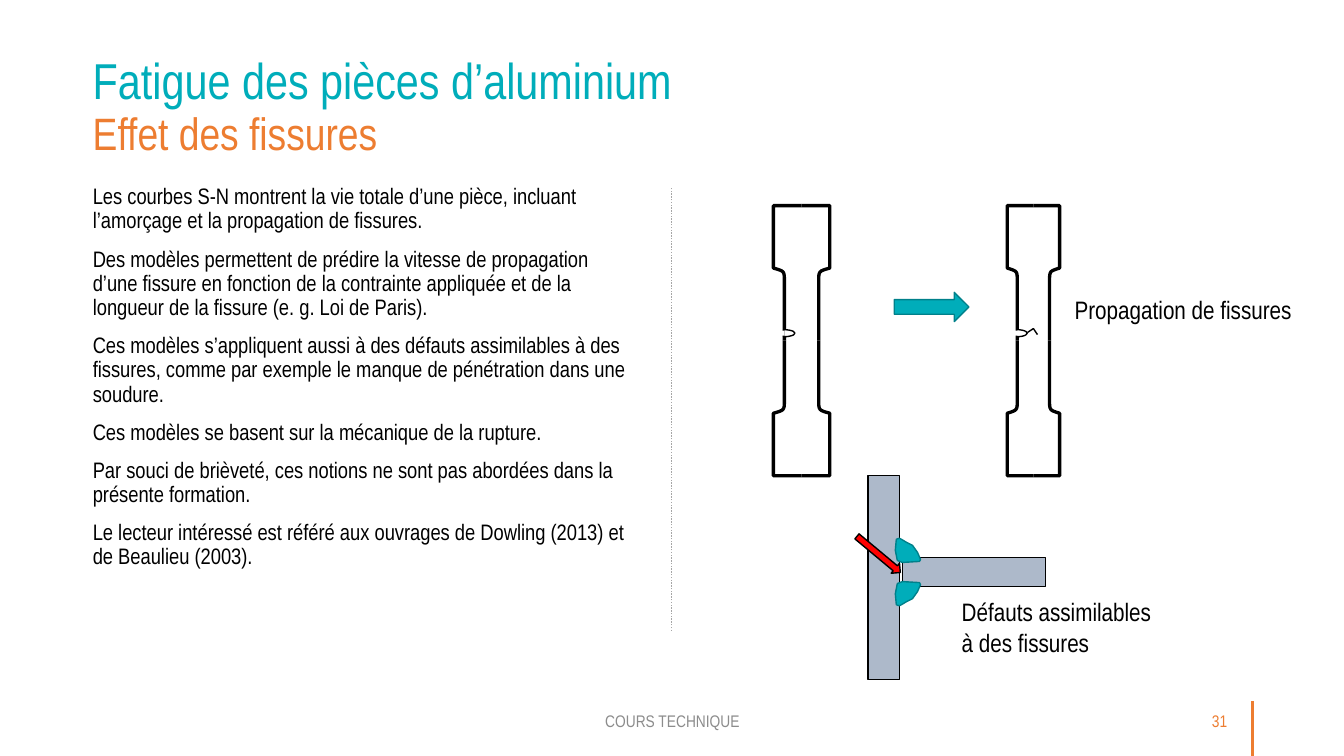
import pptx
import pptx.util
import pptx.dml.color
import pptx.enum.dml
import pptx.enum.shapes
import pptx.enum.text
import pptx.oxml.ns
from lxml import etree

Inches = pptx.util.Inches
Pt = pptx.util.Pt
RGBColor = pptx.dml.color.RGBColor
SHAPE = pptx.enum.shapes.MSO_SHAPE
ALIGN = pptx.enum.text.PP_ALIGN
ANCHOR = pptx.enum.text.MSO_ANCHOR

TEAL = RGBColor(0x00, 0xAD, 0xBA)
DARK = RGBColor(0x00, 0x80, 0x8A)
ORANGE = RGBColor(0xED, 0x7D, 0x31)
STEEL = RGBColor(0xAD, 0xB9, 0xCA)
GRAY = RGBColor(0x8C, 0x8C, 0x8C)
SILVER = RGBColor(0xA6, 0xA6, 0xA6)
RED = RGBColor(0xFF, 0x00, 0x00)
BLACK = RGBColor(0x00, 0x00, 0x00)
WHITE = RGBColor(0xFF, 0xFF, 0xFF)

BODY = [
    "Les courbes S-N montrent la vie totale d’une pièce, incluant l’amorçage et la propagation de fissures.",
    "Des modèles permettent de prédire la vitesse de propagation d’une fissure en fonction de la contrainte appliquée et de la longueur de la fissure (e. g. Loi de Paris).",
    "Ces modèles s’appliquent aussi à des défauts assimilables à des fissures, comme par exemple le manque de pénétration dans une soudure.",
    "Ces modèles se basent sur la mécanique de la rupture.",
    "Par souci de brièveté, ces notions ne sont pas abordées dans la présente formation.",
    "Le lecteur intéressé est référé aux ouvrages de Dowling (2013) et de Beaulieu (2003).",
]
WELD = [
    (8.89, 5.35), (8.88, 5.46), (8.9, 5.56), (8.95, 5.58), (9.12, 5.57),
    (9.13, 5.55), (9.1, 5.48), (9.05, 5.41), (8.99, 5.38), (8.94, 5.35),
    (8.92, 5.34),
]


def write(slide, box, text, size=18, tone=BLACK, align=ALIGN.LEFT,
          anchor=ANCHOR.TOP, inset=True, wrap=True, pitch=None, gap=0):
    frame = slide.shapes.add_textbox(*map(Inches, box)).text_frame
    frame.word_wrap = wrap
    frame.vertical_anchor = anchor
    if not inset:
        frame.margin_left = frame.margin_right = 0
        frame.margin_top = frame.margin_bottom = 0
    frame.text = text
    for i, para in enumerate(frame.paragraphs):
        para.alignment = align
        para.line_spacing = pitch
        if i and gap:
            para.space_before = Pt(gap)
        for run in para.runs:
            run.font.name = "Arial Narrow"
            run.font.size = Pt(size)
            run.font.color.rgb = tone
    return frame


def paint(shape, fill=None, line=None, width=1):
    shape.shadow.inherit = False
    if fill is None:
        shape.fill.background()
    else:
        shape.fill.solid()
        shape.fill.fore_color.rgb = fill
    if line is None:
        shape.line.fill.background()
    else:
        shape.line.color.rgb = line
        shape.line.width = Pt(width)


def block(slide, kind, box, fill, line=None, turn=0, adjust=()):
    shape = slide.shapes.add_shape(kind, *map(Inches, box))
    for i, value in enumerate(adjust):
        shape.adjustments[i] = value
    shape.rotation = turn
    paint(shape, fill, line)


def trace(slide, points, fill=None, line=BLACK, width=1, close=False):
    spots = [(Inches(x), Inches(y)) for x, y in points]
    pen = slide.shapes.build_freeform(*spots[0])
    pen.add_line_segments(spots[1:], close=close)
    paint(pen.convert_to_shape(), fill, line, width)


def rule(slide, start, end, tone, width, dash=None):
    line = slide.shapes.add_connector(
        pptx.enum.shapes.MSO_CONNECTOR.STRAIGHT, *map(Inches, start + end))
    line.line.color.rgb = tone
    line.line.width = Pt(width)
    if dash:
        line.line.dash_style = dash
    etree.SubElement(line._element.spPr, pptx.oxml.ns.qn("a:effectLst"))


def curve(a, b, c, d, steps=8):
    for i in range(steps + 1):
        t = i / steps
        u = 1 - t
        yield tuple(u**3 * p + 3 * u * u * t * q + 3 * u * t * t * r + t**3 * s
                    for p, q, r, s in zip(a, b, c, d))


def sample(slide, mid, half, neck):
    bend = curve((neck, 0.59), (neck, 0.69), (neck, 0.69), (half, 0.72))
    side = [(neck, 0), *bend, (half, 1.34), (0, 1.34)]
    for down in (-1, 1):
        for right in (-1, 1):
            trace(slide, [(mid + right * x, 3.38 + down * y) for x, y in side],
                  width=2.38)
    left = mid - half
    block(slide, SHAPE.CHORD, (left - 0.01, 3.27, 0.8 * half, 0.07), WHITE,
          BLACK, 180, (54.208, 162))
    block(slide, SHAPE.RECTANGLE, (left + 0.05, 3.28, 0.06, 0.05), WHITE)


def main():
    deck = pptx.Presentation()
    deck.slide_width, deck.slide_height = Inches(13.33), Inches(7.5)
    slide = deck.slides.add_slide(deck.slide_layouts[6])

    rule(slide, (12.42, 7.5), (12.42, 6.95), ORANGE, 2.25)
    rule(slide, (6.66, 6.26), (6.66, 1.86), SILVER, 1,
         pptx.enum.dml.MSO_LINE.ROUND_DOT)

    title = write(slide, (0.92, 0.56, 10.74, 1.01),
                  "Fatigue des pièces d’aluminium\vEffet des fissures",
                  size=36, tone=TEAL, inset=False, pitch=0.9)
    second = title.paragraphs[0].runs[1].font
    second.size = Pt(32.4)
    second.color.rgb = ORANGE
    write(slide, (4.42, 6.95, 4.5, 0.4), "COURS TECHNIQUE", size=12, tone=GRAY,
          align=ALIGN.CENTER, anchor=ANCHOR.MIDDLE)
    write(slide, (10.95, 6.95, 1.32, 0.4), "31", size=12, tone=ORANGE,
          align=ALIGN.RIGHT, anchor=ANCHOR.MIDDLE)
    write(slide, (0.92, 1.84, 5.29, 4.42), "\n".join(BODY), size=16,
          inset=False, pitch=0.9, gap=10)

    sample(slide, 7.95, 0.28, 0.17)
    sample(slide, 10.25, 0.26, 0.16)
    trace(slide, [(10.19, 3.3), (10.25, 3.26), (10.29, 3.32)])
    block(slide, SHAPE.RIGHT_ARROW, (8.87, 2.9, 0.74, 0.29), TEAL, DARK)

    block(slide, SHAPE.RECTANGLE, (8.61, 4.72, 0.31, 2.02), STEEL, BLACK)
    block(slide, SHAPE.RECTANGLE, (8.95, 5.53, 1.42, 0.29), STEEL, BLACK)
    for weld in (WELD, [(x, 11.35 - y) for x, y in WELD]):
        trace(slide, weld, TEAL, DARK, close=True)

    write(slide, (10.56, 2.87, 2.38, 0.4), "Propagation de fissures",
          wrap=False)
    write(slide, (9.44, 5.87, 2.16, 0.71),
          "Défauts assimilables\và des fissures", wrap=False)
    block(slide, SHAPE.DOWN_ARROW, (8.65, 5.22, 0.13, 0.56), RED, BLACK, 309.8)

    deck.save("out.pptx")


if __name__ == "__main__":
    main()
